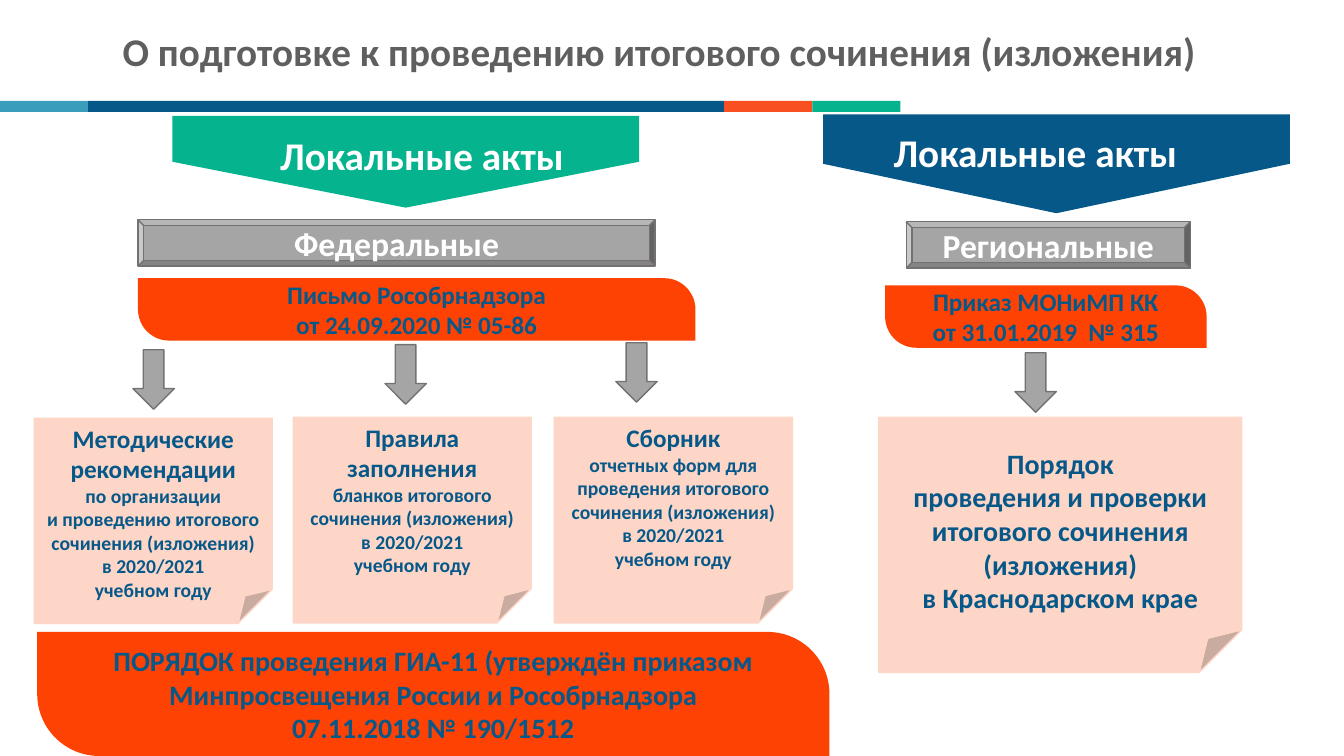
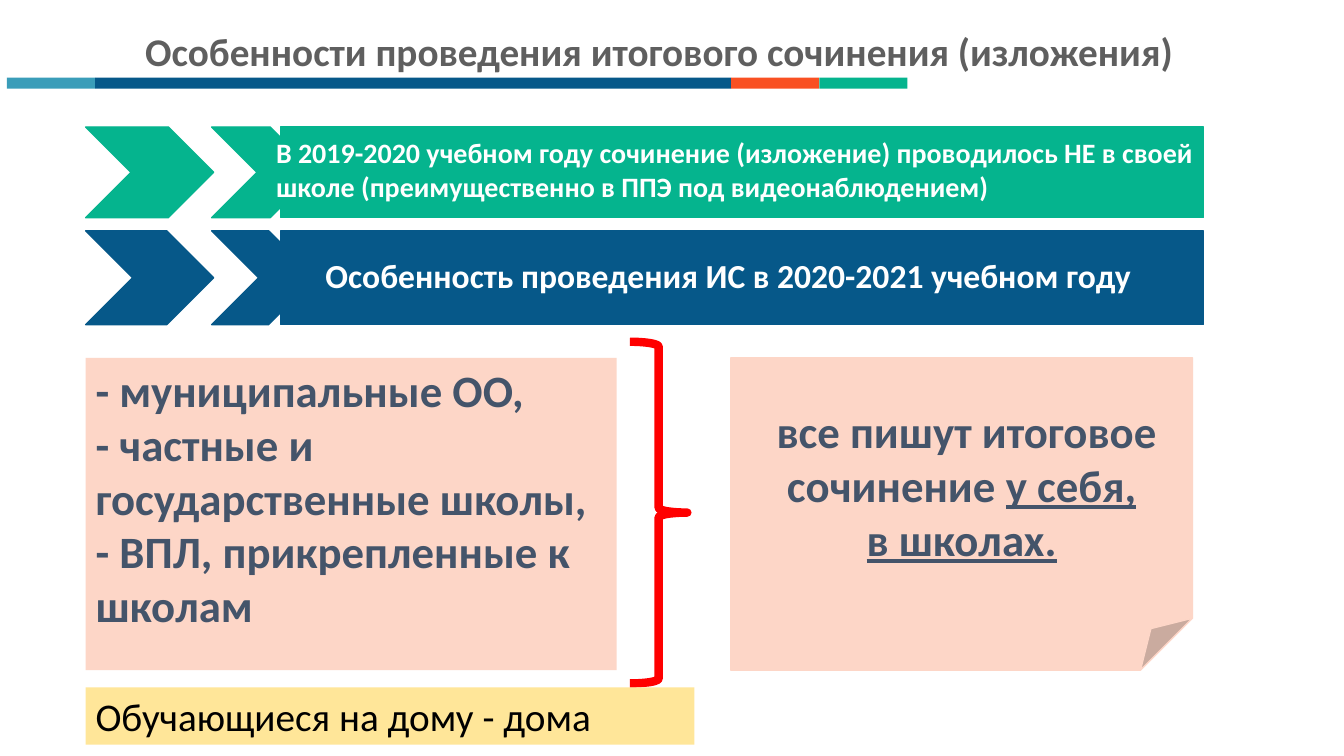
from dataclasses import dataclass
from typing import Optional

from pptx import Presentation
from pptx.dml.color import RGBColor
from pptx.enum.shapes import MSO_SHAPE as Preset
from pptx.enum.text import MSO_ANCHOR as Anchor, PP_ALIGN as Align
from pptx.util import Pt

FONT = "Calibri"
NAVY = RGBColor(0x06, 0x58, 0x89)
GREEN = RGBColor(0x05, 0xB4, 0x8E)
TEAL = RGBColor(0x3A, 0x9D, 0xB9)
CORAL = RGBColor(0xF9, 0x50, 0x22)
ORANGE = RGBColor(0xFE, 0x42, 0x03)
PEACH = RGBColor(0xFD, 0xD6, 0xC7)
YELLOW = RGBColor(0xFF, 0xE6, 0x99)
RED = RGBColor(0xFF, 0x00, 0x00)
GRAY = RGBColor(0xA5, 0xA5, 0xA5)
DARK_GRAY = RGBColor(0x76, 0x71, 0x71)
TITLE_GRAY = RGBColor(0x5F, 0x5F, 0x5F)
SLATE = RGBColor(0x44, 0x54, 0x6A)
WHITE = RGBColor(0xFF, 0xFF, 0xFF)
BLACK = RGBColor(0x00, 0x00, 0x00)


@dataclass(frozen=True)
class Box:
    left: float
    top: float
    width: float
    height: float


@dataclass(frozen=True)
class Line:
    text: str
    size: float


@dataclass(frozen=True)
class Panel:
    box: Box
    lines: tuple[Line, ...]
    top_inset: float = 3.6


@dataclass(frozen=True)
class Pennant:
    box: Box
    caption: Box
    color: RGBColor


@dataclass(frozen=True)
class Banner:
    top: float
    height: float
    color: RGBColor
    caption: Box
    line: Line


# Shared drawing functions
def write(shape, lines: tuple[Line, ...], color: RGBColor, align=Align.CENTER,
          anchor=Anchor.TOP, bold: bool = True) -> None:
    frame = shape.text_frame
    frame.word_wrap = True
    frame.vertical_anchor = anchor
    frame.text = "\n".join(line.text for line in lines)
    for paragraph, line in zip(frame.paragraphs, lines):
        paragraph.alignment = align
        font = paragraph.runs[0].font
        font.name, font.size, font.bold = FONT, Pt(line.size), bold
        font.color.rgb = color


def draw(shapes, preset, box: Box, fill: Optional[RGBColor],
         outline: Optional[RGBColor] = None, weight: float = 1):
    shape = shapes.add_shape(preset, Pt(box.left), Pt(box.top),
                             Pt(box.width), Pt(box.height))
    shape.shadow.inherit = False
    if fill is None:
        shape.fill.background()
    else:
        shape.fill.solid()
        shape.fill.fore_color.rgb = fill
    if outline is None:
        shape.line.fill.background()
    else:
        shape.line.color.rgb = outline
        shape.line.width = Pt(weight)
    return shape


def add_caption(slide, box: Box, line: Line, color: RGBColor,
                align=Align.CENTER) -> None:
    caption = slide.shapes.add_textbox(Pt(box.left), Pt(box.top),
                                       Pt(box.width), Pt(box.height))
    write(caption, (line,), color, align)


def add_titled_slide(prs, title: str, strip_left: float, strip_top: float):
    slide = prs.slides.add_slide(prs.slide_layouts[6])
    add_caption(slide, Box(71.3, 15.8, 798.5, 41), Line(title, 28), TITLE_GRAY)
    strip = slide.shapes.add_group_shape().shapes
    left = strip_left
    for width, color in ((63, TEAL), (454.2, NAVY), (63, CORAL), (63, GREEN)):
        draw(strip, Preset.RECTANGLE, Box(left, strip_top, width, 7.9), color)
        left += width
    return slide


def add_note(slide, note: Panel, color: RGBColor):
    sheet = draw(slide.shapes, Preset.FOLDED_CORNER, note.box, PEACH, PEACH)
    write(sheet, note.lines, color)
    sheet.text_frame.margin_top = Pt(note.top_inset)
    return sheet


def add_pennant(slide, pennant: Pennant) -> None:
    # The plate points right, so it is laid out sideways and turned down
    box = pennant.box
    sideways = Box(box.left + (box.width - box.height) / 2,
                   box.top - (box.width - box.height) / 2,
                   box.height, box.width)
    draw(slide.shapes, Preset.PENTAGON, sideways, pennant.color).rotation = 90
    add_caption(slide, pennant.caption, Line("Локальные акты", 28), WHITE)


def add_decree(slide, decree: Panel) -> None:
    plate = draw(slide.shapes, Preset.ROUND_2_DIAG_RECTANGLE, decree.box, ORANGE)
    plate.adjustments[0], plate.adjustments[1] = 0, 0.5
    write(plate, decree.lines, NAVY, anchor=Anchor.MIDDLE)


def add_banner(slide, banner: Banner) -> None:
    group = slide.shapes.add_group_shape().shapes
    for preset, left, width in ((Preset.CHEVRON, 61.2, 91.4),
                                (Preset.CHEVRON, 151.2, 74.2),
                                (Preset.RECTANGLE, 200.2, 659.5)):
        draw(group, preset, Box(left, banner.top, width, banner.height),
             banner.color, banner.color)
    add_caption(slide, banner.caption, banner.line, WHITE, Align.LEFT)


# Content of the first slide
PENNANTS = (
    Pennant(Box(587.9, 81.7, 333.4, 70.6), Box(581.8, 87.8, 315.4, 41), NAVY),
    Pennant(Box(123.1, 82.8, 333.4, 65.5), Box(175, 90, 252.7, 41), GREEN),
)
LEVELS = (
    Panel(Box(647.3, 158.4, 203, 33.1), (Line("Региональные", 24),)),
    Panel(Box(98.6, 157, 369.4, 33.1), (Line("Федеральные", 24),)),
)
ARROWS = ((95, 249.8), (275, 246.2), (439.9, 244.8), (725, 252))
SCHOOL_YEAR = (Line("в 2020/2021", 14), Line("учебном году", 14))
NOTES = (
    Panel(Box(24.5, 298.8, 170, 146.5),
          (Line("Методические рекомендации", 18),
           Line("по организации", 14),
           Line("и проведению итогового сочинения (изложения)", 14),
           *SCHOOL_YEAR)),
    Panel(Box(209.5, 298.1, 170, 146.9),
          (Line("Правила заполнения", 18),
           Line("бланков итогового сочинения (изложения)", 14),
           *SCHOOL_YEAR)),
    Panel(Box(396, 298.1, 170, 146.9),
          (Line("Сборник", 18),
           Line("отчетных форм для проведения итогового сочинения (изложения)", 14),
           *SCHOOL_YEAR)),
    Panel(Box(627.8, 298.1, 259.2, 182.2),
          (Line("Порядок", 20),
           Line("проведения и проверки итогового сочинения (изложения)", 20),
           Line("в Краснодарском крае", 20)), top_inset=20.7),
)
DECREES = (
    Panel(Box(98.6, 198.7, 398.2, 44.6),
          (Line("Письмо Рособрнадзора", 18), Line("от 24.09.2020 № 05-86", 18))),
    Panel(Box(632.2, 203.8, 229.7, 44.6),
          (Line("Приказ МОНиМП КК", 18), Line("от 31.01.2019  № 315", 18))),
    Panel(Box(26.6, 451.4, 565.9, 88.6),
          (Line("ПОРЯДОК проведения ГИА-11 (утверждён приказом "
                "Минпросвещения России и Рособрнадзора", 20),
           Line("07.11.2018 № 190/1512", 20))),
)

# Content of the second slide
BANNERS = (
    Banner(90.7, 64.8, GREEN, Box(190.1, 93.6, 707.8, 55.4),
           Line("В 2019-2020 учебном году сочинение (изложение) проводилось НЕ "
                "в своей школе (преимущественно в ППЭ под видеонаблюдением)", 20)),
    Banner(164.9, 67, NAVY, Box(225.4, 178.6, 707.8, 36),
           Line("Особенность проведения ИС в 2020-2021 учебном году", 24)),
)
SCHOOLS = Panel(Box(61.2, 255.6, 379.4, 223.2),
                (Line("- муниципальные ОО,", 32),
                 Line("- частные и государственные школы,", 32),
                 Line("- ВПЛ, прикрепленные к школам", 32)))
VENUE = Panel(Box(522, 255.6, 329.8, 223.2),
              (Line(" все пишут итоговое сочинение ", 32),
               Line("в школах.", 32)), top_inset=33)
HOME = Panel(Box(61.2, 491, 434.9, 41), (Line("Обучающиеся на дому - дома", 28),))


def build_acts_slide(prs) -> None:
    slide = add_titled_slide(
        prs, "О подготовке к проведению итогового сочинения (изложения)", 0, 72)
    for pennant in PENNANTS:
        add_pennant(slide, pennant)
    for level in LEVELS:
        plate = draw(slide.shapes, Preset.BEVEL, level.box, GRAY, DARK_GRAY)
        write(plate, level.lines, WHITE, anchor=Anchor.MIDDLE)
    for left, top in ARROWS:
        draw(slide.shapes, Preset.DOWN_ARROW, Box(left, top, 29.5, 42.5),
             GRAY, DARK_GRAY)
    for note in NOTES:
        add_note(slide, note, NAVY)
    for decree in DECREES:
        add_decree(slide, decree)


def build_features_slide(prs) -> None:
    slide = add_titled_slide(
        prs, "Особенности проведения итогового сочинения (изложения)", 5, 55.4)
    for banner in BANNERS:
        add_banner(slide, banner)

    # Where the essay is written, with the venue underlined
    venue = add_note(slide, VENUE, SLATE)
    first, last = venue.text_frame.paragraphs
    own_school = first.add_run()
    own_school.text = "у себя,"
    font = own_school.font
    font.name, font.size, font.bold = FONT, Pt(32), True
    font.color.rgb = SLATE
    font.underline = last.runs[0].font.underline = True

    # Who writes it
    schools = draw(slide.shapes, Preset.RECTANGLE, SCHOOLS.box, PEACH)
    write(schools, SCHOOLS.lines, SLATE, Align.LEFT)
    draw(slide.shapes, Preset.RIGHT_BRACE, Box(450, 244.1, 41, 244.1),
         None, RED, 6)
    home = draw(slide.shapes, Preset.RECTANGLE, HOME.box, YELLOW)
    write(home, HOME.lines, BLACK, Align.LEFT, bold=False)


def main() -> None:
    prs = Presentation()
    prs.slide_width, prs.slide_height = Pt(960), Pt(540)
    build_acts_slide(prs)
    build_features_slide(prs)
    prs.save("out.pptx")


if __name__ == "__main__":
    main()
